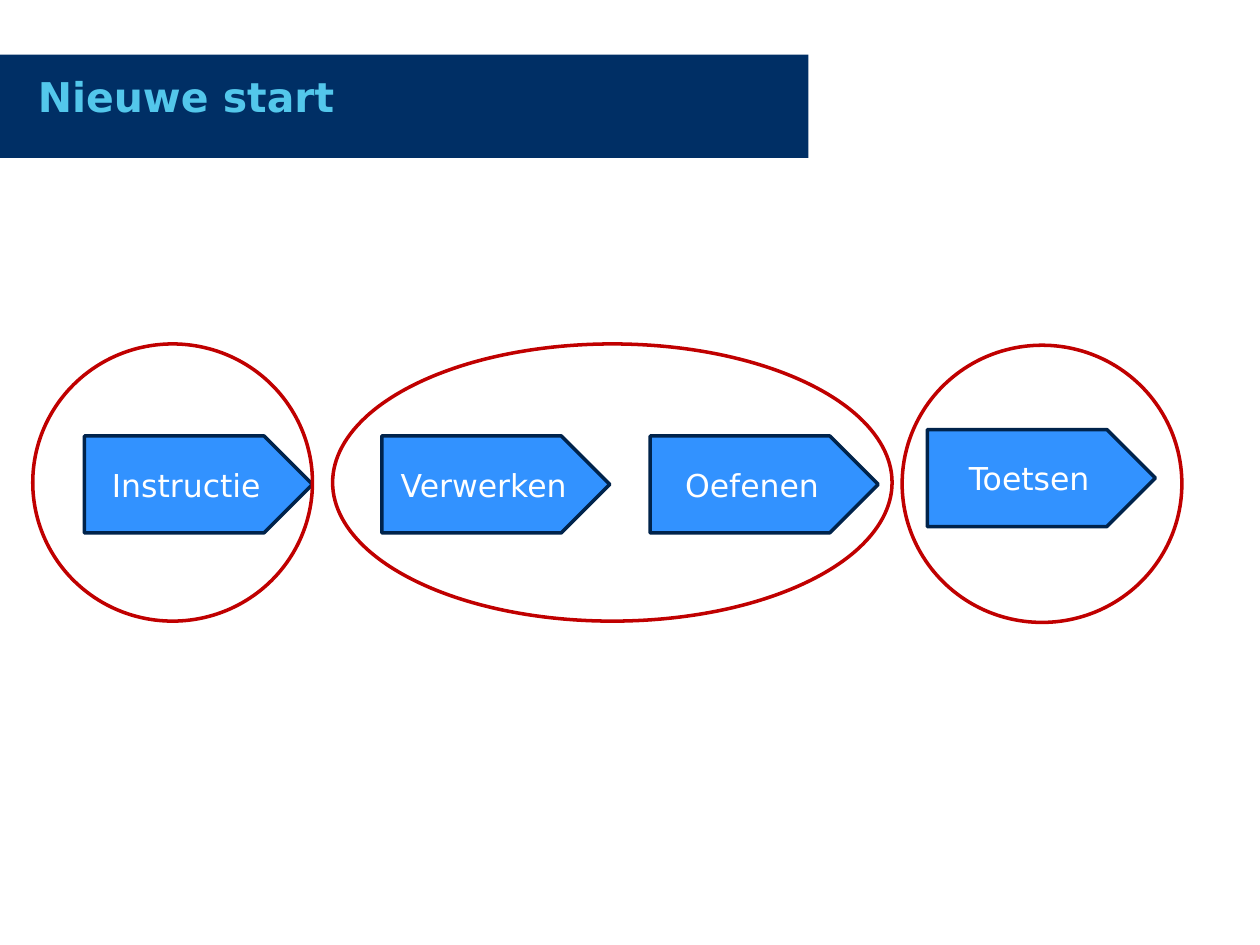
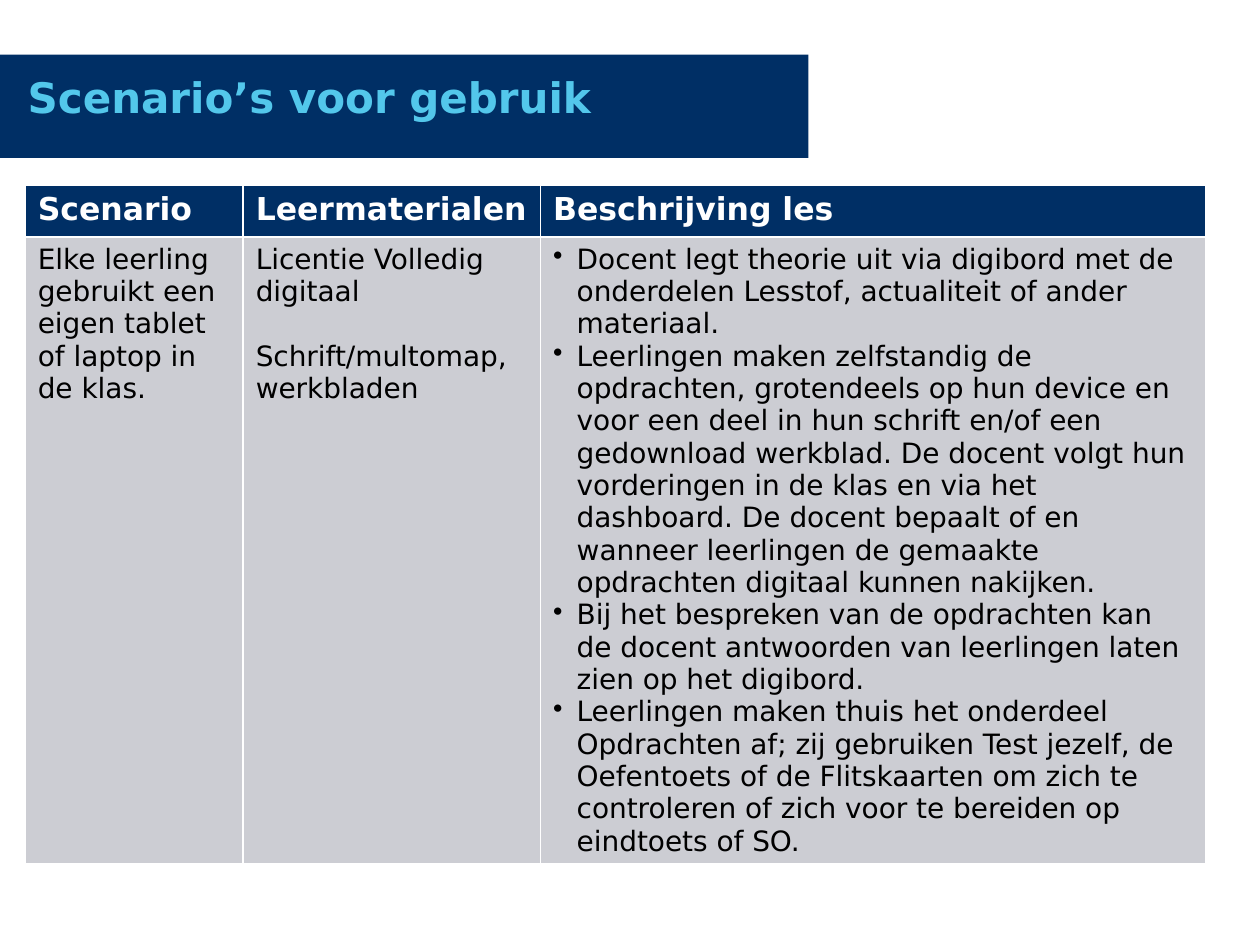
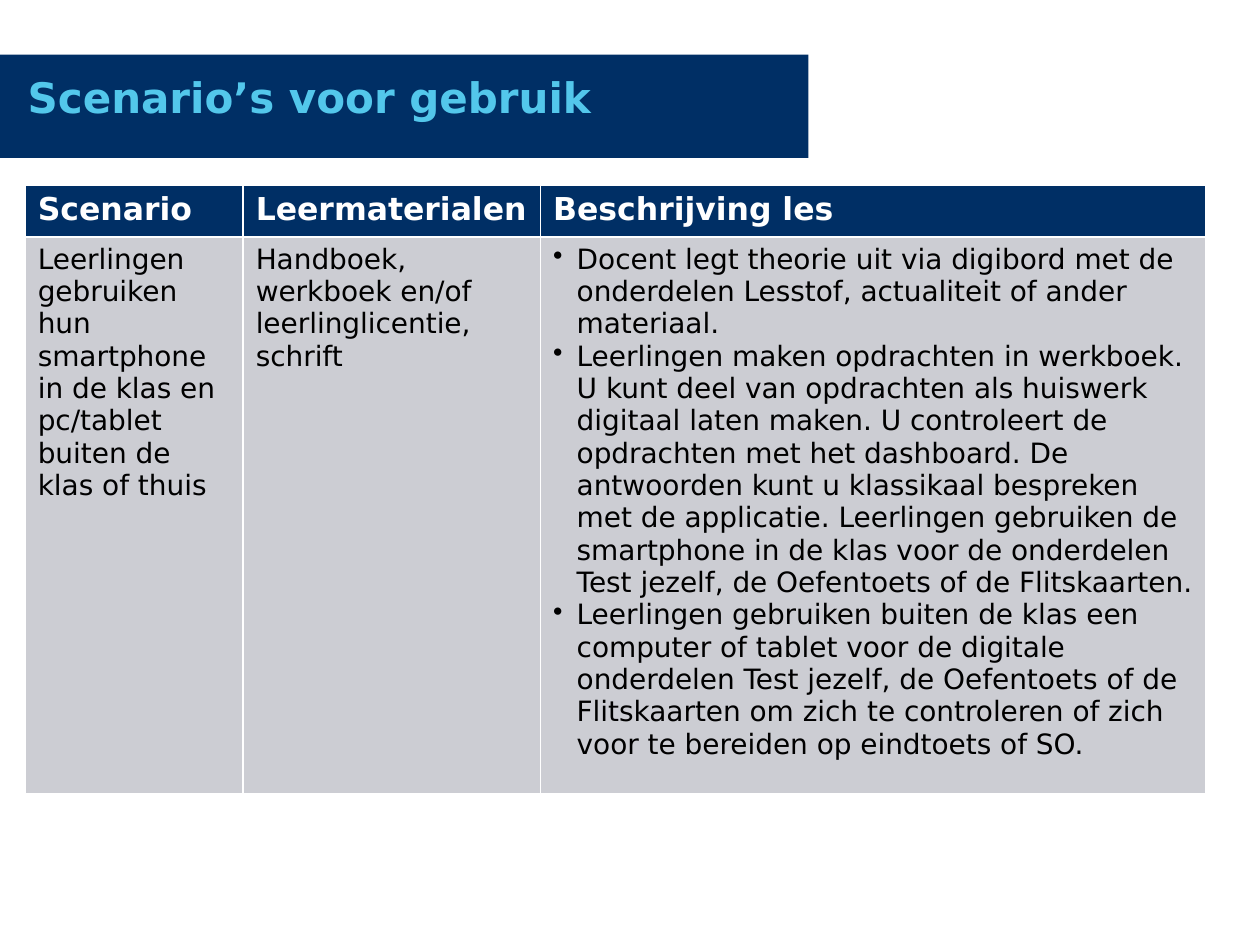
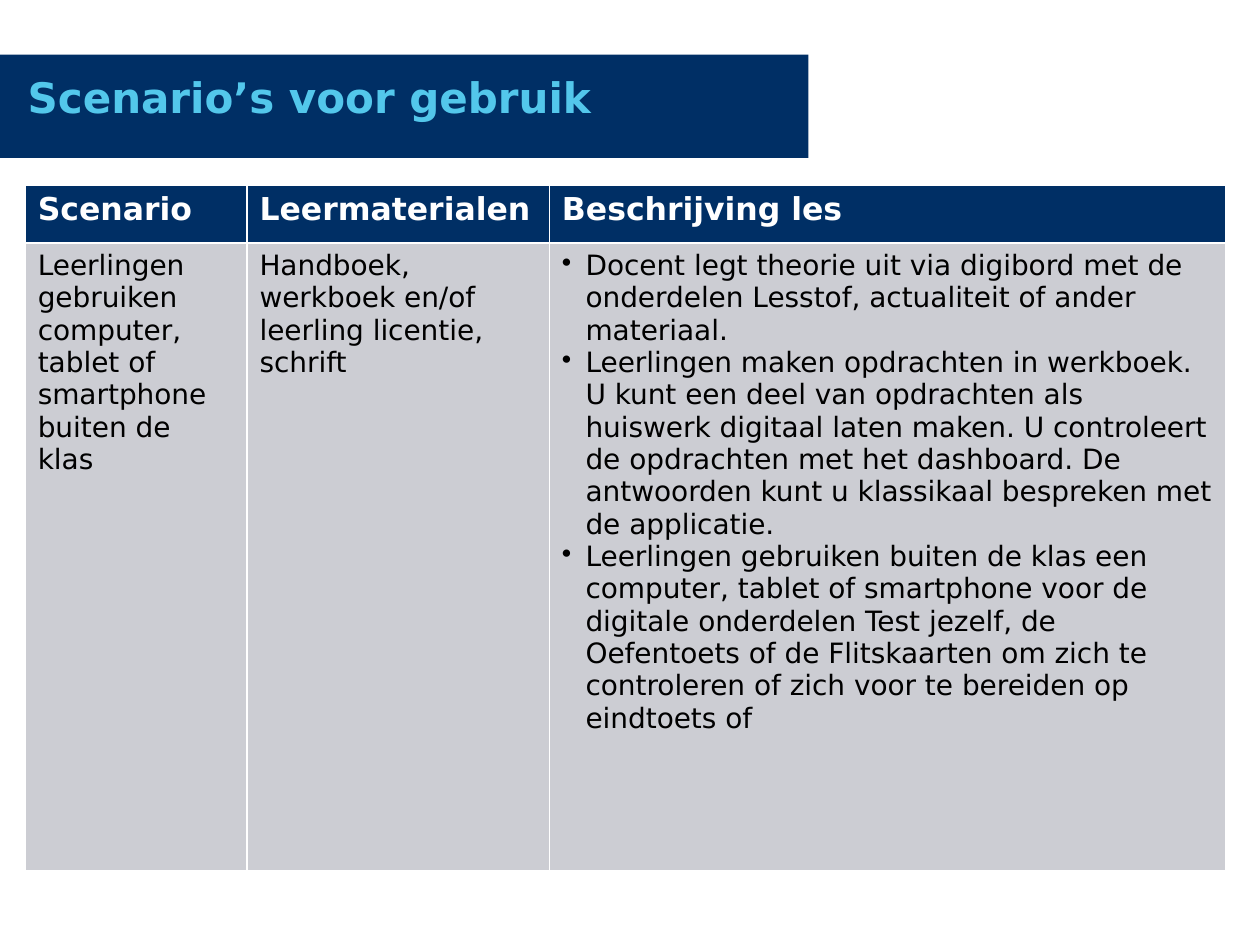
from dataclasses import dataclass
from typing import Any

import lxml.etree
import pptx
import pptx.dml.color
import pptx.enum.shapes
import pptx.enum.text
import pptx.oxml.ns
import pptx.util

Pt = pptx.util.Pt
SHAPE = pptx.enum.shapes.MSO_SHAPE
ALIGN = pptx.enum.text.PP_ALIGN
ANCHOR = pptx.enum.text.MSO_ANCHOR

FONT = "DejaVu Sans"
COLORS = {
    "navy": "002F65",
    "sky": "53C7EB",
    "blue": "3292FF",
    "outline": "00234B",
    "red": "C00000",
    "gray": "CCCDD3",
    "white": "FFFFFF",
    "black": "000000",
}
TITLE_FONT = {"name": FONT, "size": Pt(24), "bold": True}
START_FONT = TITLE_FONT | {"size": Pt(23.4)}
STEP_FONT = {"name": FONT, "size": Pt(18), "bold": False}
HEADER_FONT = {"name": FONT, "size": Pt(18), "bold": True}
BODY_FONT = {"name": FONT, "size": Pt(16), "bold": False}

HEADERS = ("Scenario", "Leermaterialen", "Beschrijving les")
THEORY = (
    "Docent legt theorie uit via digibord met de onderdelen Lesstof, "
    "actualiteit of ander materiaal."
)
BULLET_INDENT = Pt(13.5)
BLANK_LINE = Pt(18.6)
STEP_SIZE = (130.32, 55.44)
RING_HEIGHT = 158.4


@dataclass(frozen=True)
class Step:
    text: str
    left: float
    top: float = 249.12


@dataclass(frozen=True)
class Ring:
    left: float
    top: float
    width: float


@dataclass(frozen=True)
class Scenario:
    description: str
    materials: tuple[str, ...]
    lesson: tuple[str, ...]
    height: float
    columns: tuple[float, ...] = (124.56, 169.92, 380.16)
    rows: tuple[float, ...] = (29.52, 318.24)


STEPS = (
    Step("Instructie", 48.24),
    Step("Verwerken", 218.16),
    Step("Oefenen", 371.52),
    Step("Toetsen", 529.92, 245.52),
)
RINGS = (
    Ring(190.08, 196.56, 319.68),
    Ring(18.72, 196.56, 159.84),
    Ring(515.52, 197.28, 159.84),
)
SCENARIOS = (
    Scenario(
        "Elke leerling gebruikt een eigen tablet of laptop in de klas.",
        ("Licentie Volledig digitaal", "Schrift/multomap, werkbladen"),
        (
            THEORY,
            "Leerlingen maken zelfstandig de opdrachten, grotendeels op hun device "
            "en voor een deel in hun schrift en/of een gedownload werkblad. De docent "
            "volgt hun vorderingen in de klas en via het dashboard. De docent bepaalt "
            "of en wanneer leerlingen de gemaakte opdrachten digitaal kunnen nakijken.",
            "Bij het bespreken van de opdrachten kan de docent antwoorden van "
            "leerlingen laten zien op het digibord.",
            "Leerlingen maken thuis het onderdeel Opdrachten af; zij gebruiken Test "
            "jezelf, de Oefentoets of de Flitskaarten om zich te controleren of zich "
            "voor te bereiden op eindtoets of SO.",
        ),
        401.04,
    ),
    Scenario(
        "Leerlingen gebruiken hun smartphone in de klas en pc/tablet buiten de klas of thuis",
        ("Handboek, werkboek en/of leerlinglicentie, schrift",),
        (
            THEORY,
            "Leerlingen maken opdrachten in werkboek. U kunt deel van opdrachten als "
            "huiswerk digitaal laten maken. U controleert de opdrachten met het "
            "dashboard. De antwoorden kunt u klassikaal bespreken met de applicatie. "
            "Leerlingen gebruiken de smartphone in de klas voor de onderdelen Test "
            "jezelf, de Oefentoets of de Flitskaarten.",
            "Leerlingen gebruiken buiten de klas een computer of tablet voor de "
            "digitale onderdelen Test jezelf, de Oefentoets of de Flitskaarten om zich "
            "te controleren of zich voor te bereiden op eindtoets of SO.",
        ),
        362.88,
    ),
    Scenario(
        "Leerlingen gebruiken computer, tablet of smartphone buiten de klas",
        ("Handboek, werkboek en/of leerling licentie, schrift",),
        (
            THEORY,
            "Leerlingen maken opdrachten in werkboek. U kunt een deel van opdrachten "
            "als huiswerk digitaal laten maken. U controleert de opdrachten met het "
            "dashboard. De antwoorden kunt u klassikaal bespreken met de applicatie.",
            "Leerlingen gebruiken buiten de klas een computer, tablet of smartphone "
            "voor de digitale onderdelen Test jezelf, de Oefentoets of de Flitskaarten "
            "om zich te controleren of zich voor te bereiden op eindtoets of",
        ),
        391.68,
        (126.72, 172.8, 386.64),
        (33.12, 358.56),
    ),
)


def rgb(name: str) -> pptx.dml.color.RGBColor:
    return pptx.dml.color.RGBColor.from_string(COLORS[name])


def set_attrs(obj: Any, values: dict[str, Any]) -> None:
    for name, value in values.items():
        setattr(obj, name, value)


def set_fill(obj: Any, color: str) -> None:
    obj.fill.solid()
    obj.fill.fore_color.rgb = rgb(color)


def write(p: Any, text: str, font: dict[str, Any], color: str) -> None:
    r = p.add_run()
    r.text = text
    set_attrs(r.font, font)
    r.font.color.rgb = rgb(color)


def add_bullet(p: Any) -> None:
    pPr = p._p.get_or_add_pPr()
    pPr.set("marL", str(BULLET_INDENT))
    pPr.set("indent", str(-BULLET_INDENT))
    bullet = lxml.etree.SubElement(pPr, pptx.oxml.ns.qn("a:buChar"))
    bullet.set("char", "•")


def add_shape(s: Any, kind: Any, left: float, top: float, width: float, height: float,
              fill: str | None, line: str | None) -> Any:
    sp = s.shapes.add_shape(kind, Pt(left), Pt(top), Pt(width), Pt(height))
    sp.shadow.inherit = False
    if fill:
        set_fill(sp, fill)
    else:
        sp.fill.background()
    if line:
        sp.line.color.rgb = rgb(line)
        sp.line.width = Pt(2)
    else:
        sp.line.fill.background()
    return sp


def add_band(prs: Any, layout: Any) -> None:
    s = prs.slides[0]
    sp = add_shape(s, SHAPE.RECTANGLE, 0, 31.2, 462, 59, "navy", None)
    layout.shapes._spTree.insert(2, sp._element)


def add_slide(prs: Any, layout: Any, title: str, left: float, width: float,
              font: dict[str, Any]) -> Any:
    s = prs.slides.add_slide(layout)
    sp = s.shapes.title
    set_attrs(sp, {"left": Pt(left), "top": Pt(37.44), "width": Pt(width), "height": Pt(51.12)})
    tf = sp.text_frame
    set_attrs(tf, {
        "word_wrap": True,
        "auto_size": pptx.enum.text.MSO_AUTO_SIZE.NONE,
        "vertical_anchor": ANCHOR.TOP,
    })
    p = tf.paragraphs[0]
    p.alignment = ALIGN.LEFT
    write(p, title, font, "sky")
    return s


def add_step(s: Any, step: Step) -> None:
    sp = add_shape(s, SHAPE.PENTAGON, step.left, step.top, *STEP_SIZE, "blue", "outline")
    tf = sp.text_frame
    tf.vertical_anchor = ANCHOR.MIDDLE
    p = tf.paragraphs[0]
    p.alignment = ALIGN.CENTER
    write(p, step.text, STEP_FONT, "white")


def add_ring(s: Any, ring: Ring) -> None:
    add_shape(s, SHAPE.OVAL, ring.left, ring.top, ring.width, RING_HEIGHT, None, "red")


def fill_cell(cell: Any, texts: tuple[str, ...], font: dict[str, Any], color: str,
              fill: str, bullets: bool = False) -> None:
    set_fill(cell, fill)
    tf = cell.text_frame
    for i, text in enumerate(texts):
        p = tf.add_paragraph() if i else tf.paragraphs[0]
        if bullets:
            add_bullet(p)
        elif i:
            p.space_before = BLANK_LINE
        write(p, text, font, color)


def add_scenario(s: Any, scenario: Scenario) -> None:
    sp = s.shapes.add_table(2, len(HEADERS), Pt(14.4), Pt(105.84),
                            Pt(sum(scenario.columns)), Pt(scenario.height))
    table = sp.table
    table.horz_banding = False
    for column, width in zip(table.columns, scenario.columns):
        column.width = Pt(width)
    for row, height in zip(table.rows, scenario.rows):
        row.height = Pt(height)
    sp.height = Pt(scenario.height)
    body = ((scenario.description,), scenario.materials, scenario.lesson)
    for i, (header, texts) in enumerate(zip(HEADERS, body)):
        fill_cell(table.cell(0, i), (header,), HEADER_FONT, "white", "navy")
        fill_cell(table.cell(1, i), texts, BODY_FONT, "black", "gray", texts is scenario.lesson)


def main() -> None:
    prs = pptx.Presentation()
    set_attrs(prs, {"slide_width": Pt(720), "slide_height": Pt(540)})
    layout = prs.slide_layouts.get_by_name("Title Only")

    s = add_slide(prs, layout, "Nieuwe start", 14.4, 674.64, START_FONT)
    add_band(prs, layout)
    for step in STEPS:
        add_step(s, step)
    for ring in RINGS:
        add_ring(s, ring)

    for scenario in SCENARIOS:
        s = add_slide(prs, layout, "Scenario’s voor gebruik", 8.64, 430.56, TITLE_FONT)
        add_scenario(s, scenario)

    prs.save("out.pptx")


if __name__ == "__main__":
    main()
